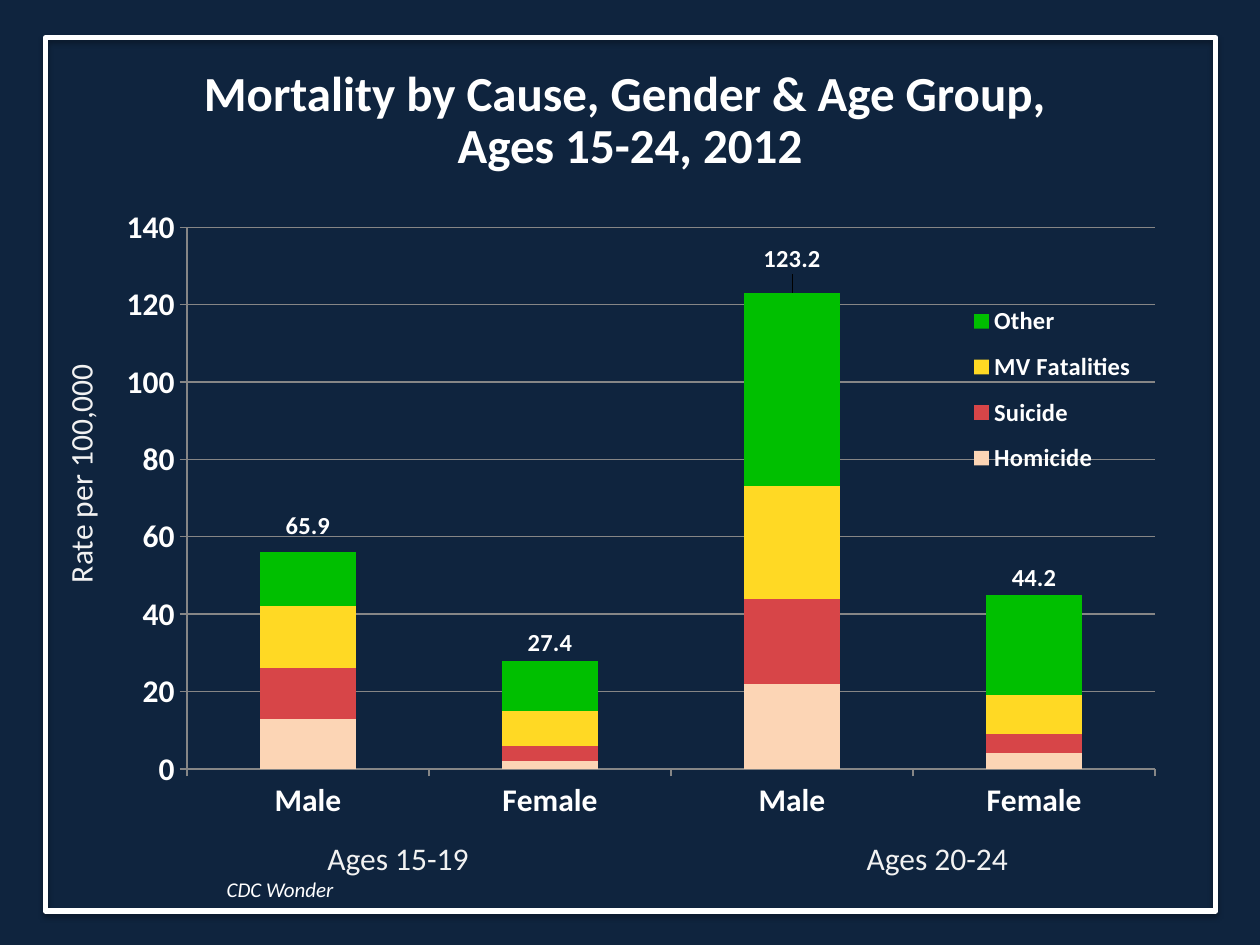
from lxml.etree import SubElement
from pptx import Presentation
from pptx.chart.data import CategoryChartData
from pptx.dml.color import RGBColor
from pptx.enum.chart import XL_CHART_TYPE, XL_LABEL_POSITION, XL_LEGEND_POSITION, XL_MARKER_STYLE, XL_TICK_MARK
from pptx.enum.shapes import MSO_SHAPE
from pptx.enum.text import MSO_ANCHOR, PP_ALIGN
from pptx.oxml import parse_xml
from pptx.oxml.ns import nsdecls, qn
from pptx.util import Inches, Pt

WIDTH, HEIGHT = 10, 7.5
COLORS = {
    "white": "FFFFFF", "label": "F2F2F2", "grid": "868686",
    "top": "0F243E", "bottom": "102640",
    "Homicide": "FCD5B5", "Suicide": "D74548",
    "MV Fatalities": "FFD924", "Other": "00BF00",
}
CAUSES = {
    "Homicide": (13, 2, 22, 4),
    "Suicide": (13, 4, 22, 5),
    "MV Fatalities": (16, 9, 29, 10),
    "Other": (14, 13, 50, 26),
}
TOTALS = (65.9, 27.4, 123.2, 44.2)
LABEL_SHIFTS = {0: 0.05, 2: -0.02}


def color(name):
    return RGBColor.from_string(COLORS[name])


def style_font(font, size, shade="white", **values):
    font.color.rgb = color(shade)
    for name, value in {"name": "Calibri", "size": Pt(size), **values}.items():
        setattr(font, name, value)


def place(shape, left, top, width, height):
    for name, value in zip(("left", "top", "width", "height"), (left, top, width, height)):
        setattr(shape, name, Inches(value))


def add_background(page):
    fill = page.background.fill
    fill.gradient()
    fill.gradient_angle = 90
    for stop, shade, position in zip(fill.gradient_stops, ("top", "bottom"), (0, 0.19)):
        stop.color.rgb = color(shade)
        stop.position = position


def add_frame(page):
    frame = page.shapes.add_shape(MSO_SHAPE.RECTANGLE, 0, 0, 0, 0)
    place(frame, 0.36, 0.3, 9.29, 6.93)
    frame.fill.background()
    frame.line.color.rgb = color("white")
    frame.line.width = Pt(3)
    frame.shadow.inherit = False
    effects = frame.element.spPr.find(qn("a:effectLst"))
    effects.append(parse_xml(
        f'<a:outerShdw {nsdecls("a")} blurRad="{Pt(3.1)}" dist="{Pt(1.8)}" dir="5400000" rotWithShape="0">'
        '<a:srgbClr val="000000"><a:alpha val="35000"/></a:srgbClr></a:outerShdw>'))


def set_title(page, text):
    title = page.shapes.title
    place(title, 0, 0.3, WIDTH, 1.33)
    title.text_frame.vertical_anchor = MSO_ANCHOR.MIDDLE
    title.text_frame.text = text
    para = title.text_frame.paragraphs[0]
    para.alignment = PP_ALIGN.CENTER
    para.line_spacing = 0.9
    for span in para.runs:
        style_font(span.font, 28, bold=True)


def add_label(page, text, area, size=18, shade="label", rotation=0, italic=False):
    box = page.shapes.add_textbox(0, 0, 0, 0)
    place(box, *area)
    box.rotation = rotation
    box.text_frame.word_wrap = True
    span = box.text_frame.paragraphs[0].add_run()
    span.text = text
    style_font(span.font, size, shade, italic=italic)


def manual_layout(**values):
    items = "".join(f'<c:{name} val="{value}"/>' for name, value in values.items())
    return parse_xml(f'<c:layout {nsdecls("c")}><c:manualLayout>{items}</c:manualLayout></c:layout>')


def set_layout(element, layout, after=None):
    for old in element.findall(qn("c:layout")):
        element.remove(old)
    if after is None:
        element.insert(0, layout)
    else:
        element.find(qn(after)).addnext(layout)


def move_totals_to_line(chart):
    bars = chart.plots[0]._element
    totals = bars.findall(qn("c:ser"))[-1]
    line = parse_xml(f'<c:lineChart {nsdecls("c")}><c:grouping val="standard"/>'
                     '<c:varyColors val="0"/></c:lineChart>')
    for flag in totals.findall(qn("c:invertIfNegative")):
        totals.remove(flag)
    line.append(totals)
    SubElement(line, qn("c:marker")).set("val", "1")
    for axis in bars.findall(qn("c:axId")):
        SubElement(line, qn("c:axId")).set("val", axis.get("val"))
    bars.addnext(line)


def style_totals(series):
    series.format.line.fill.background()
    series.marker.style = XL_MARKER_STYLE.NONE
    series.smooth = False
    labels = series.data_labels
    labels.show_value = True
    labels.position = XL_LABEL_POSITION.ABOVE
    style_font(labels.font, 14, bold=True)
    for index, shift in LABEL_SHIFTS.items():
        label = series.points[index].data_label
        style_font(label.font, 14, bold=True)
        label.position = XL_LABEL_POSITION.ABOVE
        element = labels._element.xpath(f"c:dLbl[c:idx/@val={index}]")[0]
        set_layout(element, manual_layout(x=0, y=shift), "c:idx")


def style_axes(chart):
    for axis in (chart.category_axis, chart.value_axis):
        axis.major_tick_mark = XL_TICK_MARK.OUTSIDE
        axis.format.line.color.rgb = color("grid")
        style_font(axis.tick_labels.font, 18, bold=True)
    scale = chart.value_axis
    for name, value in {"minimum_scale": 0, "maximum_scale": 140, "major_unit": 20}.items():
        setattr(scale, name, value)
    scale.major_gridlines.format.line.color.rgb = color("grid")


def style_legend(chart):
    chart.has_legend = True
    legend = chart.legend
    legend.position = XL_LEGEND_POSITION.RIGHT
    legend.include_in_layout = False
    style_font(legend.font, 14, bold=True)
    element = legend._element
    set_layout(element, manual_layout(xMode="edge", yMode="edge", x=0.8, y=0.15, w=0.17, h=0.31),
               "c:legendPos")
    element.find(qn("c:legendPos")).addnext(parse_xml(
        f'<c:legendEntry {nsdecls("c")}><c:idx val="{len(CAUSES)}"/><c:delete val="1"/></c:legendEntry>'))


def add_mortality_chart(page):
    data = CategoryChartData()
    data.categories = ("Male", "Female") * 2
    for name, values in {**CAUSES, "Series 5": TOTALS}.items():
        data.add_series(name, values)
    area = map(Inches, (0.83, 1.55, 8.5, 5.06))
    chart = page.shapes.add_chart(XL_CHART_TYPE.COLUMN_STACKED, *area, data).chart
    style_font(chart.font, 18, bold=True)
    chart.has_title = False
    move_totals_to_line(chart)
    bars, line = chart.plots
    for name, value in {"gap_width": 150, "overlap": 100, "vary_by_categories": False}.items():
        setattr(bars, name, value)
    for series in bars.series:
        series.format.fill.solid()
        series.format.fill.fore_color.rgb = color(series.name)
    style_totals(line.series[0])
    style_axes(chart)
    style_legend(chart)
    plot_area = chart._chartSpace.find(".//" + qn("c:plotArea"))
    set_layout(plot_area, manual_layout(layoutTarget="inner", xMode="edge", yMode="edge",
                                        x=0.077, y=0.05, w=0.904, h=0.85))


def main():
    deck = Presentation()
    deck.slide_width, deck.slide_height = Inches(WIDTH), Inches(HEIGHT)
    page = deck.slides.add_slide(deck.slide_layouts[5])
    add_background(page)
    add_frame(page)
    set_title(page, "Mortality by Cause, Gender & Age Group, \vAges 15-24, 2012")
    add_label(page, "CDC Wonder", (1.7, 6.91, 5.94, 0.3), 12, "white", italic=True)
    add_mortality_chart(page)
    for text, left in (("Ages 15-19", 2.5), ("Ages 20-24", 6.78)):
        add_label(page, text, (left, 6.61, 1.67, 0.4))
    add_label(page, "Rate per 100,000", (-0.84, 3.05, 2.95, 0.4), rotation=270)
    deck.save("out.pptx")


if __name__ == "__main__":
    main()
